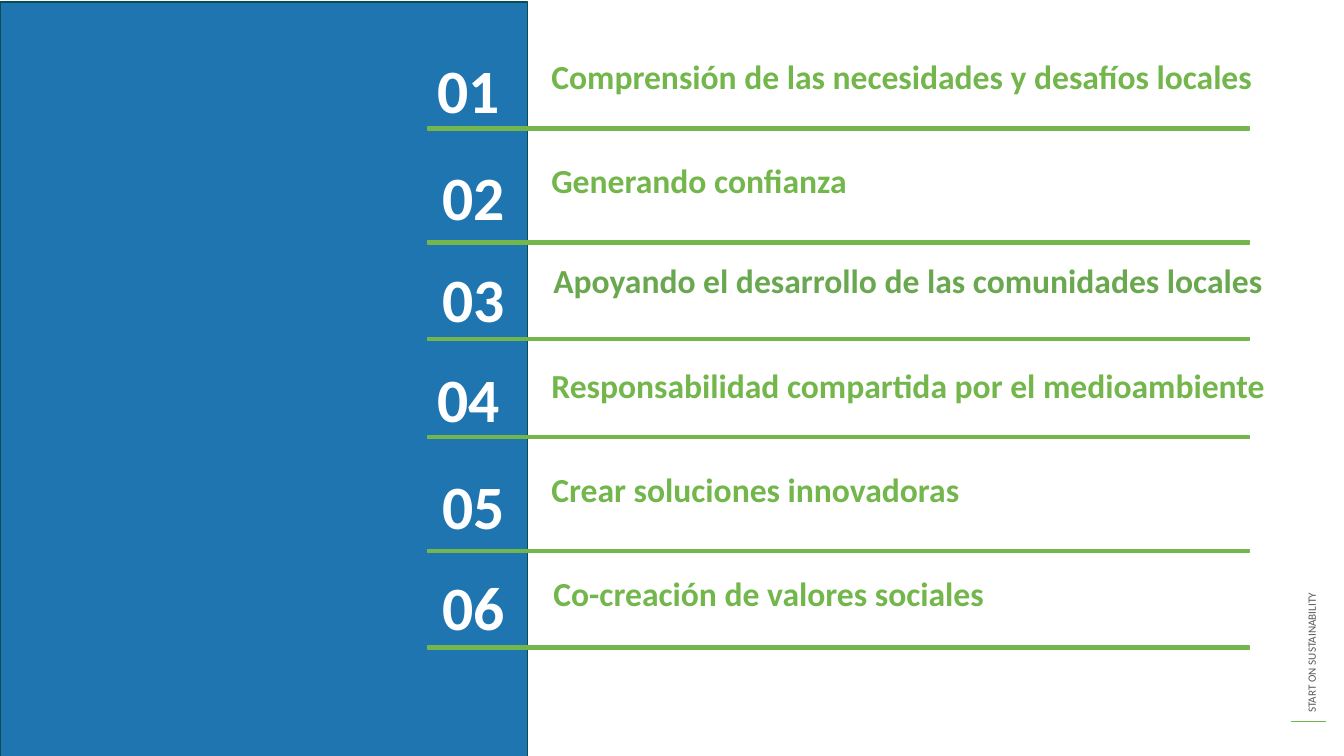
"""Builds an agenda slide with six numbered topics beside a blue panel."""
import pptx
import pptx.dml.color
import pptx.enum.shapes
import pptx.enum.text
import pptx.oxml
import pptx.util

Inches = pptx.util.Inches
Pt = pptx.util.Pt
RGBColor = pptx.dml.color.RGBColor

BLUE = RGBColor(0x1E, 0x75, 0xB0)
DARK_TEAL = RGBColor(0x05, 0x4F, 0x50)
GREEN = RGBColor(0x73, 0xB6, 0x4B)
LEAF_GREEN = RGBColor(0x6A, 0xA8, 0x4F)
GREY = RGBColor(0x59, 0x59, 0x59)
WHITE = RGBColor(0xFF, 0xFF, 0xFF)

TOPICS = [
    "Comprensión de las necesidades y desafíos locales",
    "Generando confianza",
    "Apoyando el desarrollo de las comunidades locales",
    "Responsabilidad compartida por el medioambiente",
    "Crear soluciones innovadoras",
    "Co-creación de valores sociales",
]
BLOCK_HEIGHT = 3.06
TITLE_PITCH = 1.03
NUMBER_LEFTS = [4.24, 4.29, 4.29]
NUMBER_TOPS = [0.25, 1.31, 2.32]
TITLE_LEFTS = [5.37, 5.37, 5.39]
RULE_TOPS = [1.26, 2.39, 3.35]

presentation = pptx.Presentation()
presentation.slide_width = Inches(13.33)
presentation.slide_height = Inches(7.5)
slide = presentation.slides.add_slide(presentation.slide_layouts[6])


def add_text(text, left, top, width, height, size, color, bold=True, spacing=1.0):
    shape = slide.shapes.add_textbox(Inches(left), Inches(top), Inches(width), Inches(height))
    shape.text_frame.text = text
    shape.text_frame.word_wrap = True
    shape.text_frame.vertical_anchor = pptx.enum.text.MSO_ANCHOR.TOP
    paragraph = shape.text_frame.paragraphs[0]
    paragraph.line_spacing = spacing
    font = paragraph.runs[0].font
    font.name = "Calibri"
    font.size = Pt(size)
    font.bold = bold
    font.color.rgb = color
    return shape


def add_bar(left, top, width, height, fill, line):
    shape = slide.shapes.add_shape(
        pptx.enum.shapes.MSO_SHAPE.RECTANGLE,
        Inches(left), Inches(top), Inches(width), Inches(height))
    shape.shadow.inherit = False
    shape.fill.solid()
    shape.fill.fore_color.rgb = fill
    shape.line.color.rgb = line
    shape.line.width = Pt(1)


label = add_text("START ON SUSTAINABILITY", 10.78, 4.82, 4.46, 0.24, 8, GREY, bold=False)
label.rotation = 270

label_rule = slide.shapes.add_connector(
    pptx.enum.shapes.MSO_CONNECTOR.STRAIGHT,
    Inches(12.8), Inches(7.16), Inches(13.15), Inches(7.16))
label_rule.line.color.rgb = GREEN
label_rule.line.width = Pt(1)
label_rule._element.spPr.append(pptx.oxml.parse_xml(
    '<a:effectLst xmlns:a="http://schemas.openxmlformats.org/drawingml/2006/main"/>'))

add_bar(0, 0.02, 5.23, 7.5, BLUE, DARK_TEAL)

for index, topic in enumerate(TOPICS):
    block, row = divmod(index, 3)
    offset = block * BLOCK_HEIGHT
    color, spacing = (LEAF_GREEN, 0.9) if index == 2 else (GREEN, 1.0)
    add_text(topic, TITLE_LEFTS[row], 0.51 + row * TITLE_PITCH + offset,
             7.43, 0.37, 24, color, spacing=spacing)
    add_text(f"{index + 1:02}", NUMBER_LEFTS[row], NUMBER_TOPS[row] + offset,
             1.35, 1.05, 44, WHITE, spacing=1.3)
    add_bar(4.24, RULE_TOPS[row] + offset, 8.15, 0.03, GREEN, GREEN)

presentation.save("out.pptx")
